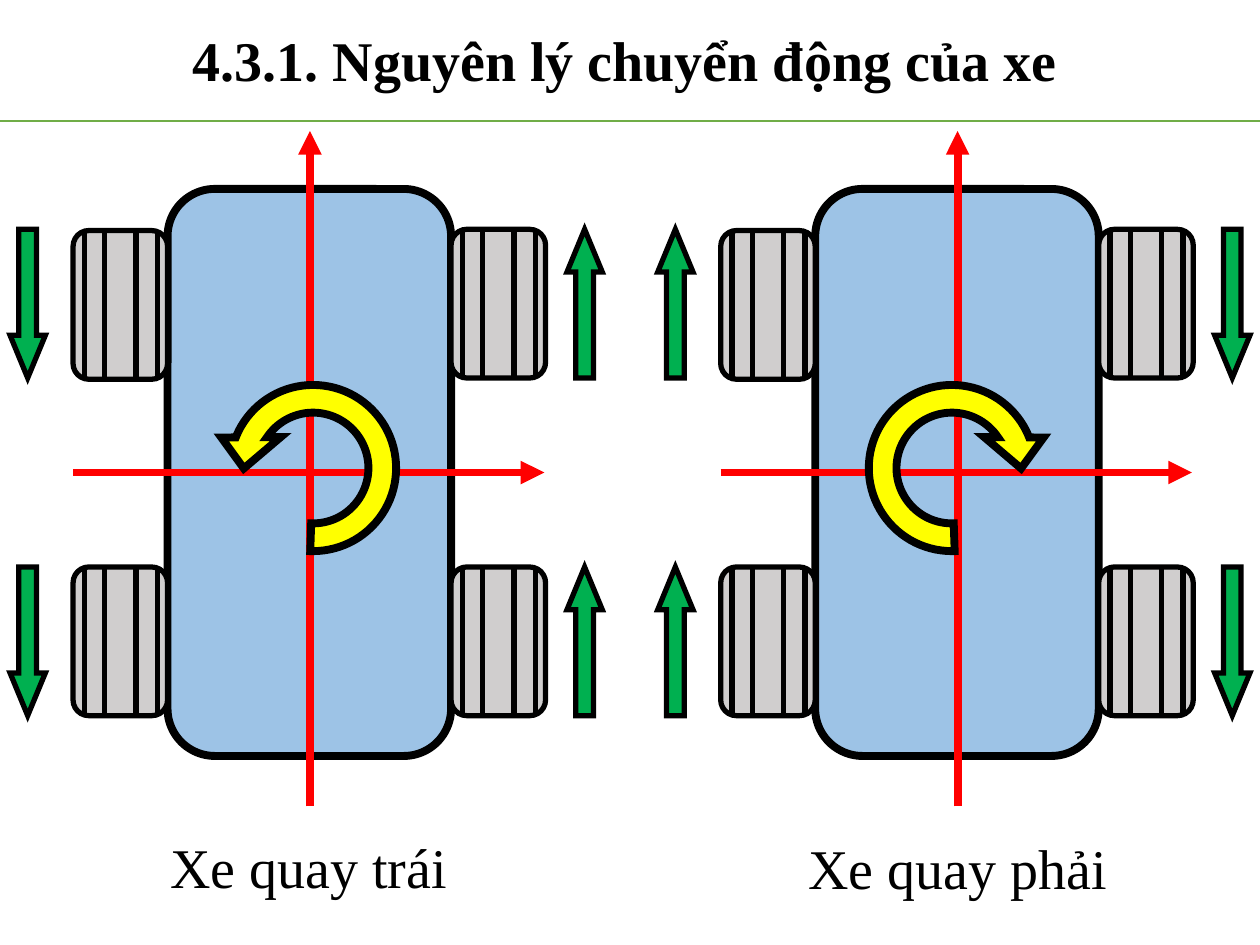
"""Build the slide on how a four-wheeled vehicle turns left and right."""
from lxml import etree
from pptx import Presentation
from pptx.dml.color import RGBColor
from pptx.enum import shapes, text
from pptx.oxml import ns
from pptx.util import Inches, Pt

BLACK = RGBColor(0x00, 0x00, 0x00)
BODY_BLUE = RGBColor(0x9D, 0xC3, 0xE6)
WHEEL_GREY = RGBColor(0xD0, 0xCE, 0xCE)
AXIS_RED = RGBColor(0xFF, 0x00, 0x00)
ARROW_GREEN = RGBColor(0x00, 0xB0, 0x50)
TURN_YELLOW = RGBColor(0xFF, 0xFF, 0x00)
RULE_GREEN = RGBColor(0x70, 0xAD, 0x47)
KIND = shapes.MSO_SHAPE


def add_shape(parent, kind, box, fill, width, adjustments=(), flip=None):
    shape = parent.shapes.add_shape(kind, *map(Inches, box))
    shape.shadow.inherit = False
    shape.fill.solid()
    shape.fill.fore_color.rgb = fill
    shape.line.color.rgb = BLACK
    shape.line.width = Pt(width)
    outline = shape._element.spPr.find(ns.qn("a:ln"))
    etree.SubElement(outline, ns.qn("a:miter"), lim="800000")
    for index, value in enumerate(adjustments):
        shape.adjustments[index] = value
    if flip:
        shape._element.spPr.find(ns.qn("a:xfrm")).set(flip, "1")


def add_line(parent, points, color, width, arrow=False):
    line = parent.shapes.add_connector(
        shapes.MSO_CONNECTOR.STRAIGHT, *map(Inches, points))
    line.line.color.rgb = color
    line.line.width = Pt(width)
    properties = line._element.spPr
    if arrow:
        outline = properties.find(ns.qn("a:ln"))
        etree.SubElement(outline, ns.qn("a:tailEnd"), type="triangle")
    etree.SubElement(properties, ns.qn("a:effectLst"))


presentation = Presentation()
presentation.slide_width = Inches(10)
presentation.slide_height = Inches(7.5)
slide = presentation.slides.add_slide(presentation.slide_layouts[6])

add_line(slide, (0, 0.96, 10, 0.96), RULE_GREEN, 1.5)

labels = [
    ("4.3.1. Nguyên lý chuyển động của xe", (1.26, 0.15, 7.4, 0.64), True),
    ("Xe quay trái", (1, 6.56, 2.9, 0.64), False),
    ("Xe quay phải", (6.15, 6.57, 2.9, 0.64), False),
]
for wording, box, bold in labels:
    frame = slide.shapes.add_textbox(*map(Inches, box)).text_frame
    frame.word_wrap = True
    frame.auto_size = text.MSO_AUTO_SIZE.SHAPE_TO_FIT_TEXT
    paragraph = frame.paragraphs[0]
    paragraph.alignment = text.PP_ALIGN.CENTER
    run = paragraph.add_run()
    run.text = wording
    run.font.name = "Times New Roman"
    run.font.size = Pt(32)
    run.font.bold = bold
    run.font.color.rgb = BLACK

vehicles = [
    (6.47, 6.77, None, None, "flipV"),
    (1.33, 1.70, "flipH", "flipV", None),
]
for body_left, turn_left, turn_flip, left_flip, right_flip in vehicles:
    vehicle = slide.shapes.add_group_shape()
    add_shape(vehicle, KIND.ROUNDED_RECTANGLE,
              (body_left, 1.5, 2.25, 4.5), BODY_BLUE, 4.5)

    wheel_left = body_left - 0.75
    wheel_right = body_left + 2.25
    wheels = [(wheel_right, 4.5), (wheel_right, 1.82),
              (wheel_left, 4.5), (wheel_left, 1.83)]
    for left, top in wheels:
        add_shape(vehicle, KIND.ROUNDED_RECTANGLE,
                  (left, top, 0.75, 1.18), WHEEL_GREY, 3)
        for offset in (0.09, 0.25, 0.5, 0.67):
            tread = left + offset
            add_line(vehicle, (tread, top, tread, top + 1.18), BLACK, 3)

    center = body_left + 1.13
    add_line(vehicle, (center, 6.4, center, 1.04), AXIS_RED, 4.5, arrow=True)
    add_line(vehicle, (wheel_left, 3.75, wheel_left + 3.74, 3.75),
             AXIS_RED, 4.5, arrow=True)

    for left, flip in ((body_left - 1.25, left_flip),
                       (body_left + 3.17, right_flip)):
        for top in (1.82, 4.5):
            add_shape(vehicle, KIND.UP_ARROW, (left, top, 0.28, 1.18),
                      ARROW_GREEN, 3, (0.5, 1.21), flip)

    add_shape(vehicle, KIND.CIRCULAR_ARROW, (turn_left, 2.93, 1.57, 1.57),
              TURN_YELLOW, 4.5, (0.14, 15.99, 200.21, 52.85, 0.15), turn_flip)

presentation.save("out.pptx")
